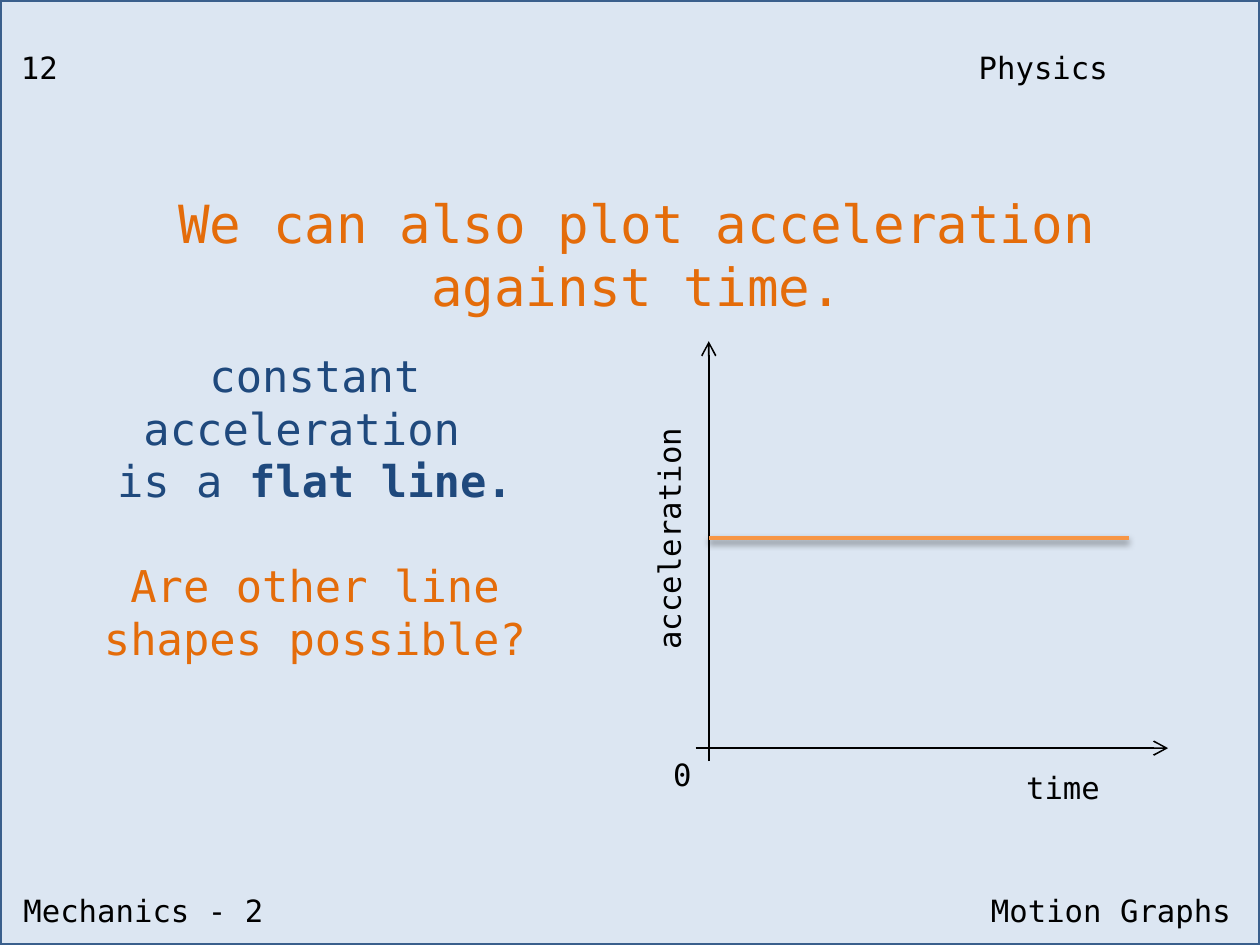
from lxml import etree
from pptx import Presentation
from pptx.dml.color import RGBColor
from pptx.enum import shapes, text
from pptx.oxml import ns
from pptx.util import Pt

FONT = "DejaVu Sans Mono"
COLORS = {
    "background": "DCE6F2",
    "border": "3A5F8C",
    "black": "000000",
    "orange": "E46C0A",
    "blue": "1F497D",
    "plot": "F79646",
}
LEFT, CENTER, RIGHT = text.PP_ALIGN.LEFT, text.PP_ALIGN.CENTER, text.PP_ALIGN.RIGHT
LABEL_HEIGHT = 24.5


def color(name):
    return RGBColor.from_string(COLORS[name])


def place(sp, left, top, width, height):
    sp.left, sp.top, sp.width, sp.height = Pt(left), Pt(top), Pt(width), Pt(height)


def write(sp, paragraphs, size, color_name, align=CENTER):
    """Each paragraph is a list of (text, bold) runs."""
    tf = sp.text_frame
    tf.word_wrap = True
    tf.auto_size = text.MSO_AUTO_SIZE.NONE
    tf.vertical_anchor = text.MSO_ANCHOR.TOP
    for i, runs in enumerate(paragraphs):
        p = tf.add_paragraph() if i else tf.paragraphs[0]
        p.alignment = align
        p.font.name = FONT
        p.font.size = Pt(size)
        p.font.color.rgb = color(color_name)
        for words, bold in runs:
            r = p.add_run()
            r.text = words
            if bold:
                r.font.bold = True


def add_text(parent, box, paragraphs, size, color_name, align=CENTER):
    sp = parent.add_textbox(*map(Pt, box))
    write(sp, paragraphs, size, color_name, align)
    return sp


def add_label(parent, words, left, top, width, align=CENTER):
    box = (left, top, width, LABEL_HEIGHT)
    return add_text(parent, box, [[(words, False)]], 14, "black", align)


def add_line(parent, start, end, color_name, width, arrow=False, shadow=False):
    sp = parent.add_connector(shapes.MSO_CONNECTOR.STRAIGHT, *map(Pt, start + end))
    sp.line.color.rgb = color(color_name)
    sp.line.width = Pt(width)
    if arrow:
        etree.SubElement(sp.line._get_or_add_ln(), ns.qn("a:tailEnd"), type="arrow")
    effects = etree.SubElement(sp._element.spPr, ns.qn("a:effectLst"))
    if shadow:
        outer = etree.SubElement(
            effects, ns.qn("a:outerShdw"), rotWithShape="0", dir="5400000",
            blurRad=str(Pt(3.1)), dist=str(Pt(1.6)))
        tint = etree.SubElement(outer, ns.qn("a:srgbClr"), val=COLORS["black"])
        etree.SubElement(tint, ns.qn("a:alpha"), val="38000")


def add_background(s, width, height):
    sp = s.shapes.add_shape(shapes.MSO_SHAPE.RECTANGLE, 0, 0, width, height)
    sp.shadow.inherit = False
    sp.fill.solid()
    sp.fill.fore_color.rgb = color("background")
    sp.line.color.rgb = color("border")
    sp.line.width = Pt(2)
    # Send behind the title placeholder
    s.shapes._spTree.insert(2, sp._element)


def add_graph(s):
    graph = s.shapes.add_group_shape().shapes
    x0, y0, overhang = 324, 342, 6

    # Axes
    add_line(graph, (x0, y0 + overhang), (x0, 156), "black", 0.75, arrow=True)
    add_line(graph, (x0 - overhang, y0), (534, y0), "black", 0.75, arrow=True)

    # Axis labels
    add_label(graph, "0", 294, y0, 36)
    add_label(graph, "time", 444, 348, 84)
    add_label(graph, "acceleration", 234, 234, 144).rotation = 270

    # Constant acceleration
    add_line(graph, (x0, 246), (516, 246), "plot", 2, shadow=True)


def main():
    prs = Presentation()
    prs.slide_width, prs.slide_height = Pt(576), Pt(432)
    s = prs.slides.add_slide(prs.slide_layouts[5])
    add_background(s, prs.slide_width, prs.slide_height)

    # Header and footer
    add_label(s.shapes, "Physics", 396, 18.7, 162)
    add_label(s.shapes, "12", 0, 18.7, 36)
    add_label(s.shapes, "Mechanics - 2", 3.6, 404, 162, LEFT)
    add_label(s.shapes, "Motion Graphs", 342, 404, 228, RIGHT)

    # Title
    title = s.shapes.title
    place(title, 18, 83.5, 546, 66)
    write(title, [[("We can also plot acceleration against time.", False)]],
          24, "orange")

    # Explanation, graph and question
    add_text(s.shapes, (24, 156, 240, 78),
             [[("constant acceleration ", False)],
              [("is a ", False), ("flat line.", True)]], 20, "blue")
    add_graph(s)
    add_text(s.shapes, (24, 252, 240, 55.5),
             [[("Are other line shapes possible?", False)]], 20, "orange")

    prs.save("out.pptx")


if __name__ == "__main__":
    main()
